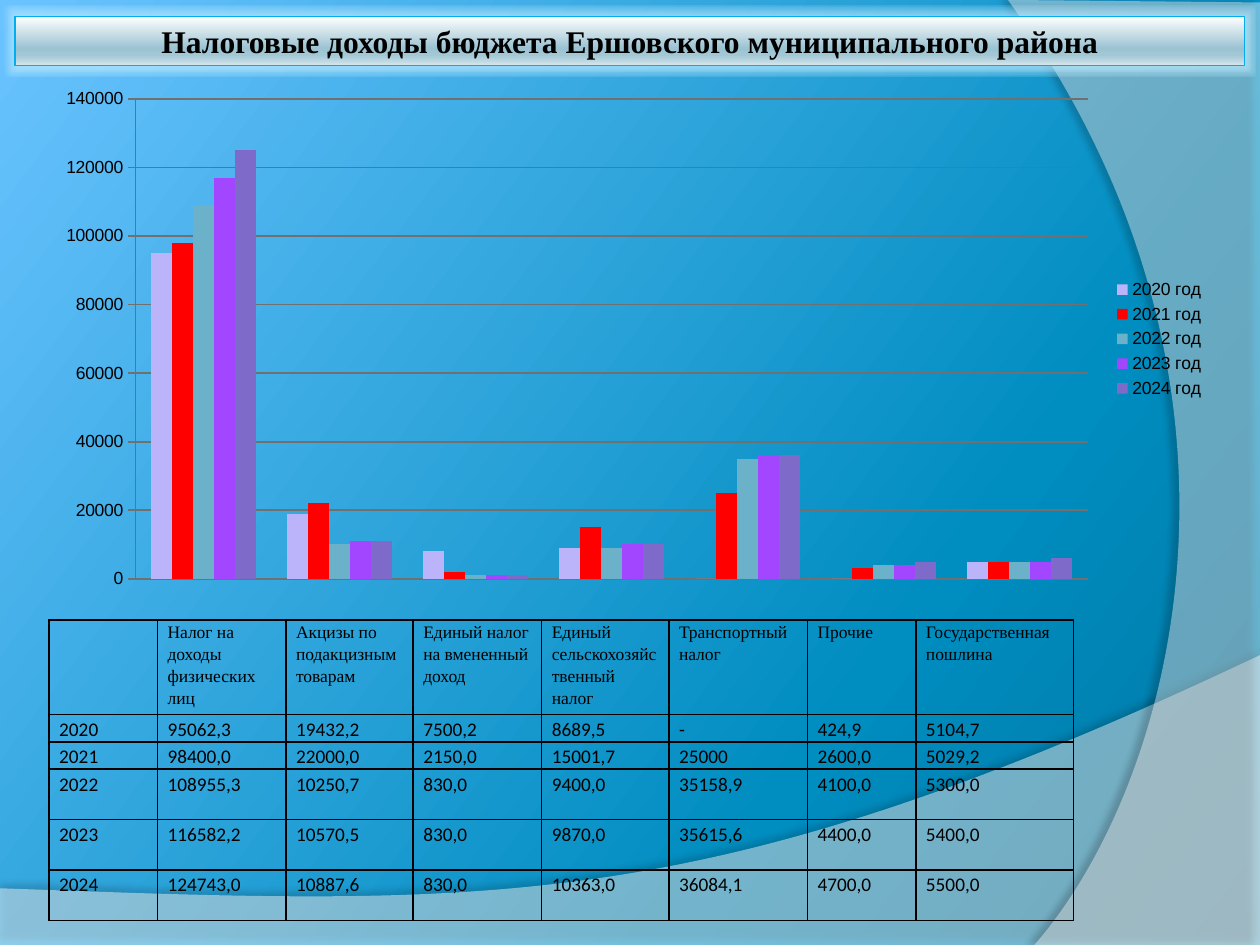
from dataclasses import dataclass

from pptx import Presentation
from pptx import oxml
from pptx import util as u
from pptx.chart.data import CategoryChartData
from pptx.dml.color import RGBColor
from pptx.enum import chart as charts
from pptx.enum import shapes, text
from pptx.oxml import ns


@dataclass(frozen=True)
class Theme:
    ink: str = "000000"
    white: str = "FFFFFF"
    grid: str = "707070"
    border: str = "00AEEF"
    glow: str = "BDEBFF"
    background: tuple = ((0, "0076A1"), (30, "008DC0"), (100, "6AC3FF"))
    banner: tuple = ((0, "FFFFFF"), (65, "9CC3D2"), (80, "A3C8D5"), (100, "D5E6EC"))
    series: tuple = ("BBB4FB", "FF0000", "6BB1C9", "A246FF", "7E6BC9")
    heading_font: str = "Times New Roman"
    body_font: str = "Calibri"
    chart_font: str = "Arial"
    title_size: int = 18
    small_size: int = 10
    body_size: int = 11


TITLE = "Налоговые доходы бюджета Ершовского муниципального района"
HEADERS = [
    "", "Налог на доходы физических лиц", "Акцизы по подакцизным товарам",
    "Единый налог на вмененный доход", "Единый сельскохозяйственный налог",
    "Транспортный налог", "Прочие", "Государственная пошлина",
]
REVENUES = [
    ["2020", "95062,3", "19432,2", "7500,2", "8689,5", "-", "424,9", "5104,7"],
    ["2021", "98400,0", "22000,0", "2150,0", "15001,7", "25000", "2600,0", "5029,2"],
    ["2022", "108955,3", "10250,7", "830,0", "9400,0", "35158,9", "4100,0", "5300,0"],
    ["2023", "116582,2", "10570,5", "830,0", "9870,0", "35615,6", "4400,0", "5400,0"],
    ["2024", "124743,0", "10887,6", "830,0", "10363,0", "36084,1", "4700,0", "5500,0"],
]
COLUMN_WIDTHS = [0.86, 1.02, 1.01, 1.02, 1.01, 1.1, 0.86, 1.25]
ROW_HEIGHTS = [0.75, 0.21, 0.21, 0.4, 0.4, 0.4]


def rgb(color):
    return RGBColor.from_string(color)


def xml(tag, inner, attributes=""):
    prefix = tag.split(":")[0]
    declarations = ns.nsdecls(*{prefix, "a"})
    return oxml.parse_xml(f"<{tag} {declarations} {attributes}>{inner}</{tag}>")


def color_xml(color, alpha=100):
    return f'<a:srgbClr val="{color}"><a:alpha val="{alpha * 1000}"/></a:srgbClr>'


def nearest_thousand(value):
    return 0 if value == "-" else int(round(float(value.replace(",", ".")), -3))


class SlideBuilder:
    def __init__(self, slide, theme):
        self.slide = slide
        self.theme = theme

    def gradient(self, fill, element, stops, angle):
        fill.gradient()
        current = element.xpath(".//a:gradFill")[0]
        stop_xml = "".join(
            f'<a:gs pos="{position * 1000}">{color_xml(color)}</a:gs>'
            for position, color in stops
        )
        inner = f'<a:gsLst>{stop_xml}</a:gsLst><a:lin ang="{angle * 60000}" scaled="0"/>'
        current.getparent().replace(current, xml("a:gradFill", inner, 'rotWithShape="1"'))

    def effect(self, shape, tag, color, alpha, attributes):
        shape.shadow.inherit = False
        effects = shape.element.spPr.find(ns.qn("a:effectLst"))
        effects.append(xml(tag, color_xml(color, alpha), attributes))

    def background(self):
        self.gradient(self.slide.background.fill, self.slide.element, self.theme.background, 217)

    def wave(self, corners, curve, alpha, shadow_alpha, distance, direction):
        points = [(u.Inches(x), u.Inches(y)) for x, y in [*corners, curve[-1]]]
        builder = self.slide.shapes.build_freeform(*points[0], scale=1.0)
        builder.add_line_segments(points[1:], close=True)
        shape = builder.convert_to_shape()
        last_line = shape.element.spPr.xpath(".//a:lnTo")[len(corners) - 1]
        curve_xml = "".join(
            f'<a:pt x="{u.Inches(x) - shape.left}" y="{u.Inches(y) - shape.top}"/>'
            for x, y in curve
        )
        last_line.getparent().replace(last_line, xml("a:cubicBezTo", curve_xml))
        shape.fill.solid()
        shape.fill.fore_color.rgb = rgb(self.theme.white)
        shape.element.spPr.xpath("a:solidFill/a:srgbClr")[0].append(
            xml("a:alpha", "", f'val="{alpha * 1000}"')
        )
        shape.line.fill.background()
        self.effect(
            shape, "a:outerShdw", self.theme.ink, shadow_alpha,
            f'blurRad="{u.Pt(4)}" dist="{u.Pt(distance)}" dir="{direction * 60000}"',
        )

    def format_text(self, paragraph, font, size, bold=False):
        for run in paragraph.runs:
            run.font.name = font
            run.font.size = u.Pt(size)
            run.font.bold = bold
            run.font.color.rgb = rgb(self.theme.ink)

    def banner(self, wording, left, top, width, height):
        shape = self.slide.shapes.add_shape(
            shapes.MSO_SHAPE.RECTANGLE, *map(u.Inches, (left, top, width, height))
        )
        self.gradient(shape.fill, shape.element, self.theme.banner, 90)
        shape.line.color.rgb = rgb(self.theme.border)
        shape.line.width = u.Pt(0.75)
        self.effect(shape, "a:glow", self.theme.glow, 45, f'rad="{u.Pt(3)}"')
        frame = shape.text_frame
        frame.text = wording
        frame.word_wrap = True
        frame.vertical_anchor = text.MSO_ANCHOR.MIDDLE
        frame.margin_left = frame.margin_right = u.Inches(0.05)
        frame.margin_top = frame.margin_bottom = u.Inches(0.05)
        paragraph = frame.paragraphs[0]
        paragraph.alignment = text.PP_ALIGN.CENTER
        self.format_text(paragraph, self.theme.heading_font, self.theme.title_size, True)

    def cell(self, cell, wording, font, size):
        cell.text = wording
        cell.margin_left = cell.margin_right = u.Inches(0.08)
        cell.margin_top = cell.margin_bottom = 0
        paragraph = cell.text_frame.paragraphs[0]
        paragraph.line_spacing = 1.15
        self.format_text(paragraph, font, size)
        properties = cell._tc.get_or_add_tcPr()
        line = f"<a:solidFill>{color_xml(self.theme.ink)}</a:solidFill>"
        for side in "LRTB":
            properties.append(xml(f"a:ln{side}", line, f'w="{u.Pt(1)}"'))
        cell.fill.background()

    def table(self, rows, left, top):
        frame = self.slide.shapes.add_table(
            len(rows), len(rows[0]), u.Inches(left), u.Inches(top),
            u.Inches(sum(COLUMN_WIDTHS)), u.Inches(sum(ROW_HEIGHTS)),
        )
        table = frame.table
        table.first_row = table.horz_banding = False
        for column, width in zip(table.columns, COLUMN_WIDTHS):
            column.width = u.Inches(width)
        for index, (row, height, values) in enumerate(zip(table.rows, ROW_HEIGHTS, rows)):
            row.height = u.Inches(height)
            font, size = (
                (self.theme.body_font, self.theme.body_size) if index
                else (self.theme.heading_font, self.theme.small_size)
            )
            for cell, value in zip(row.cells, values):
                self.cell(cell, value, font, size)

    def chart(self, rows, left, top, width, height):
        data = CategoryChartData()
        data.categories = [str(index) for index in range(1, len(rows[0]))]
        for year, *values in rows:
            data.add_series(f"{year} год", [nearest_thousand(value) for value in values])
        chart = self.slide.shapes.add_chart(
            charts.XL_CHART_TYPE.COLUMN_CLUSTERED,
            *map(u.Inches, (left, top, width, height)), data,
        ).chart
        chart.has_title = False
        chart.font.name = self.theme.chart_font
        chart.font.size = u.Pt(self.theme.small_size)
        chart.font.color.rgb = rgb(self.theme.ink)
        chart.has_legend = True
        chart.legend.position = charts.XL_LEGEND_POSITION.RIGHT
        chart.legend.include_in_layout = False
        plot = chart.plots[0]
        plot.vary_by_categories = False
        plot.gap_width = 150
        plot.overlap = 0
        for series, color in zip(plot.series, self.theme.series):
            series.format.fill.solid()
            series.format.fill.fore_color.rgb = rgb(color)
        chart.category_axis.visible = False
        axis = chart.value_axis
        axis.minimum_scale, axis.maximum_scale, axis.major_unit = 0, 140000, 20000
        axis.major_tick_mark = charts.XL_TICK_MARK.CROSS
        axis.tick_labels.number_format = "0"
        axis.tick_labels.number_format_is_linked = False
        axis.has_major_gridlines = True
        for line in (axis.format.line, axis.major_gridlines.format.line):
            line.color.rgb = rgb(self.theme.grid)
            line.width = u.Pt(1)
        self.plot_layout(chart, x=0.08, y=0.04, w=0.81, h=0.92)

    def plot_layout(self, chart, **fractions):
        area = chart.element.xpath("c:chart/c:plotArea")[0]
        for layout in area.xpath("c:layout"):
            area.remove(layout)
        modes = '<c:layoutTarget val="inner"/><c:xMode val="edge"/><c:yMode val="edge"/>'
        sizes = "".join(f'<c:{key} val="{value}"/>' for key, value in fractions.items())
        area.insert(0, xml("c:layout", f"<c:manualLayout>{modes}{sizes}</c:manualLayout>"))


def main():
    presentation = Presentation()
    presentation.slide_width, presentation.slide_height = u.Inches(10), u.Inches(7.5)
    slide = presentation.slides.add_slide(presentation.slide_layouts[6])
    builder = SlideBuilder(slide, Theme())
    builder.background()
    bottom_curve = [(5.59, 7.29), (3.91, 7.19), (0, 7.05)]
    builder.wave([(0, 7.5), (10, 7.5), (10, 5.2)], bottom_curve, 45, 35, 3.5, 270)
    right_curve = [(9.35, 6.19), (10.18, 3), (8, 0)]
    builder.wave([(10, 0.02), (10, 7.5), (8.21, 7.5)], right_curve, 40, 45, 4, 180)
    builder.banner(TITLE, 0.12, 0.13, 9.76, 0.39)
    builder.table([HEADERS, *REVENUES], 0.39, 4.92)
    builder.chart(REVENUES, 0.33, 0.62, 9.33, 4.14)
    presentation.save("out.pptx")


if __name__ == "__main__":
    main()
